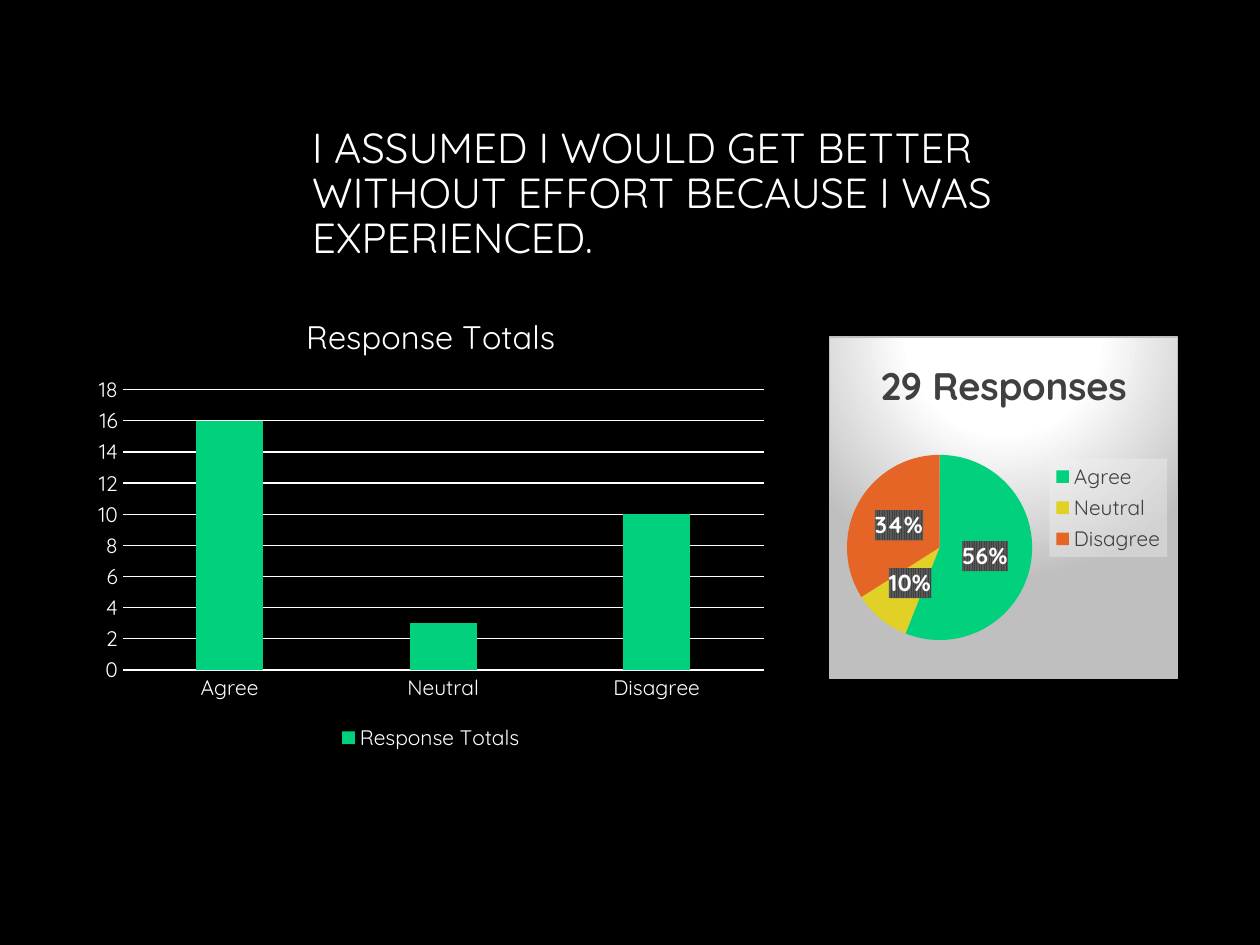
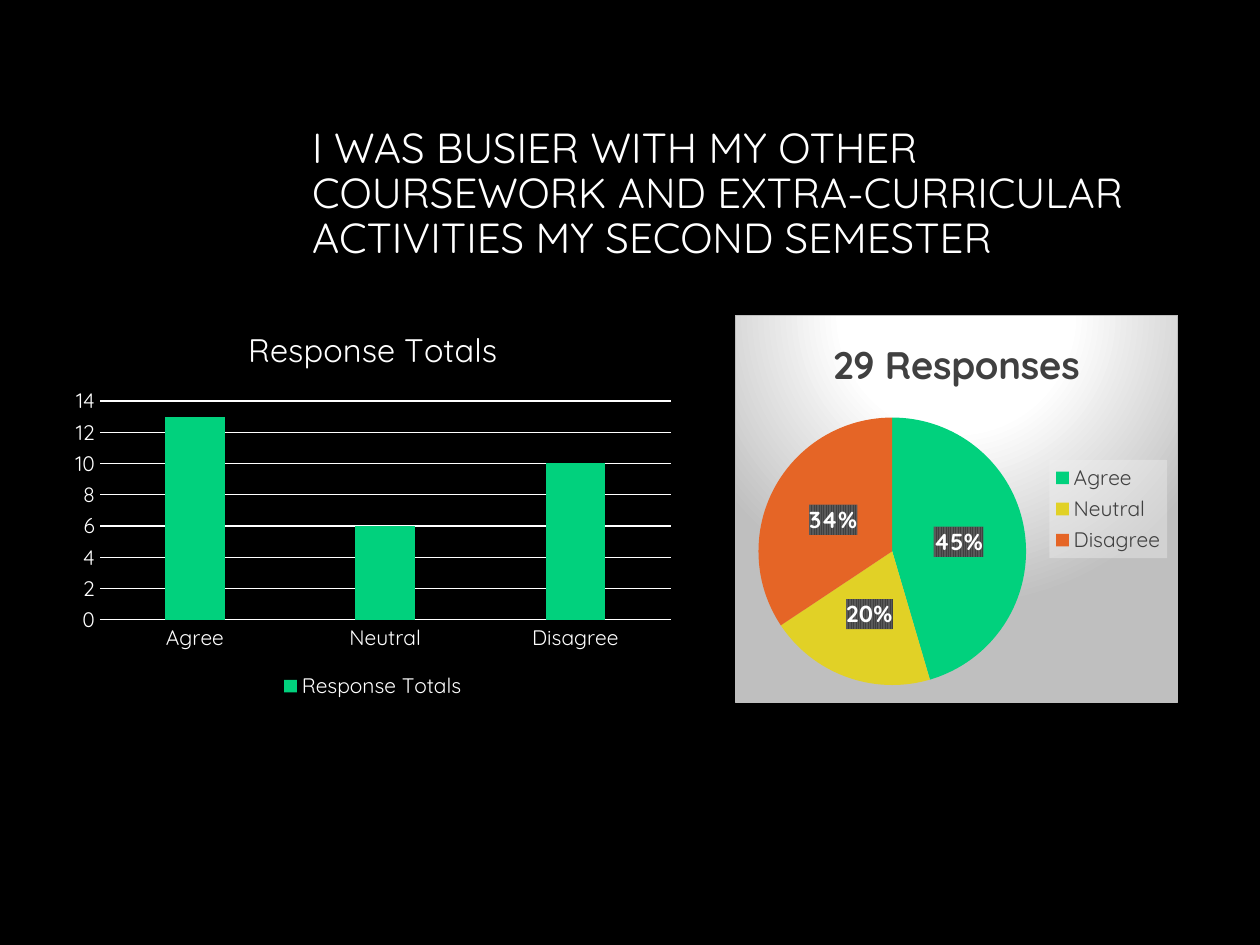
from dataclasses import dataclass

from lxml import etree
from pptx import Presentation
from pptx.chart.chart import Chart
from pptx.chart.data import CategoryChartData
from pptx.dml.color import RGBColor
from pptx.enum.chart import XL_CHART_TYPE as ChartType
from pptx.enum.chart import XL_LABEL_POSITION as LabelPosition
from pptx.enum.chart import XL_LEGEND_POSITION as LegendPosition
from pptx.enum.chart import XL_TICK_MARK as TickMark
from pptx.enum.text import MSO_ANCHOR as Anchor
from pptx.oxml import parse_xml
from pptx.oxml.ns import nsdecls, qn
from pptx.slide import Slide
from pptx.util import Inches, Pt

FONT = "Quicksand"
COLORS = {
    "background": "000000",
    "text": "FFFFFF",
    "dark": "404040",
    "stripe": "595959",
    "panel_edge": "BFBFBF",
    "legend": "F2F2F2",
    "agree": "01D17D",
    "neutral": "E1D126",
    "disagree": "E56526",
}
ANSWERS = ("Agree", "Neutral", "Disagree")
TOTALS_TITLE = "Response Totals"
SHARES_TITLE = "29 Responses"

# Fills that need XML: pie panel, legend and striped labels
PANEL_FILL = f"""<a:gradFill>
  <a:gsLst>
    <a:gs pos="0"><a:srgbClr val="{COLORS['text']}"/></a:gs>
    <a:gs pos="39000"><a:srgbClr val="{COLORS['text']}"/></a:gs>
    <a:gs pos="100000"><a:srgbClr val="{COLORS['panel_edge']}"/></a:gs>
  </a:gsLst>
  <a:path path="circle"><a:fillToRect l="50000" t="-80000" r="50000" b="180000"/></a:path>
</a:gradFill>
<a:ln w="9525"><a:solidFill><a:srgbClr val="{COLORS['panel_edge']}"/></a:solidFill></a:ln>"""
LEGEND_FILL = f"""<a:solidFill><a:srgbClr val="{COLORS['legend']}">
  <a:alpha val="39000"/></a:srgbClr></a:solidFill>"""
LABEL_FILL = f"""<a:pattFill prst="narVert">
  <a:fgClr><a:srgbClr val="{COLORS['dark']}"/></a:fgClr>
  <a:bgClr><a:srgbClr val="{COLORS['stripe']}"/></a:bgClr>
</a:pattFill>"""


@dataclass(frozen=True)
class ChartSpec:
    box: tuple[float, float, float, float]
    series_name: str
    values: tuple[int, ...]


@dataclass(frozen=True)
class Question:
    title: str
    totals: ChartSpec
    shares: ChartSpec


QUESTIONS = (
    Question(
        "I ASSUMED I WOULD GET BETTER WITHOUT EFFORT BECAUSE I WAS EXPERIENCED.",
        ChartSpec((0.67, 2.31, 5.5, 3.69), TOTALS_TITLE, (16, 3, 10)),
        ChartSpec((6.58, 2.67, 2.77, 2.72), "Series 1", (56, 10, 34)),
    ),
    Question(
        "I WAS BUSIER WITH MY OTHER COURSEWORK AND EXTRA-CURRICULAR "
        "ACTIVITIES MY SECOND SEMESTER",
        ChartSpec((0.5, 2.42, 4.92, 3.17), TOTALS_TITLE, (13, 6, 10)),
        ChartSpec((5.83, 2.5, 3.52, 3.08), SHARES_TITLE, (45, 20, 34)),
    ),
)


def rgb(name: str) -> RGBColor:
    return RGBColor.from_string(COLORS[name])


def style_font(font, size: float, color: str = "text", bold: bool = False) -> None:
    font.name = FONT
    font.size = Pt(size)
    font.bold = bold
    font.color.rgb = rgb(color)


def style_line(line) -> None:
    line.color.rgb = rgb("text")
    line.width = Pt(0.75)


def set_fill(chart: Chart, text_properties: str, fill: str) -> None:
    """Put shape properties just before the given text properties."""
    target = chart.element.xpath(text_properties)[0]
    target.addprevious(parse_xml(f"<c:spPr {nsdecls('c', 'a')}>{fill}</c:spPr>"))


def add_title(slide: Slide, text: str) -> None:
    box = slide.shapes.add_textbox(Inches(2.38), Inches(0.84), Inches(6.97), Inches(1.41))
    text_frame = box.text_frame
    text_frame.word_wrap = True
    text_frame.vertical_anchor = Anchor.MIDDLE
    text_frame.text = text
    paragraph = text_frame.paragraphs[0]
    paragraph.line_spacing = 0.9
    style_font(paragraph.runs[0].font, 24)


def add_base_chart(slide: Slide, spec: ChartSpec, kind: ChartType, title: str,
                   title_size: float, legend_position: LegendPosition,
                   color: str, bold_title: bool) -> Chart:
    data = CategoryChartData()
    data.categories = ANSWERS
    data.add_series(spec.series_name, spec.values)
    box = (Inches(length) for length in spec.box)
    chart = slide.shapes.add_chart(kind, *box, data).chart
    style_font(chart.font, 10)

    chart.has_title = True
    text_frame = chart.chart_title.text_frame
    text_frame.text = title
    style_font(text_frame.paragraphs[0].runs[0].font, title_size, color, bold_title)

    chart.has_legend = True
    chart.legend.position = legend_position
    chart.legend.include_in_layout = False
    style_font(chart.legend.font, 12, color)
    return chart


def add_totals_chart(slide: Slide, spec: ChartSpec) -> None:
    chart = add_base_chart(slide, spec, ChartType.COLUMN_CLUSTERED, TOTALS_TITLE,
                           18.6, LegendPosition.BOTTOM, "text", False)
    plot = chart.plots[0]
    plot.vary_by_categories = False
    plot.gap_width = 219
    plot.overlap = -27
    fill = plot.series[0].format.fill
    fill.solid()
    fill.fore_color.rgb = rgb("agree")

    for axis in (chart.category_axis, chart.value_axis):
        axis.major_tick_mark = axis.minor_tick_mark = TickMark.NONE
        style_font(axis.tick_labels.font, 12)
    style_line(chart.category_axis.format.line)
    chart.value_axis.format.line.fill.background()
    style_line(chart.value_axis.major_gridlines.format.line)


def add_shares_chart(slide: Slide, spec: ChartSpec) -> None:
    chart = add_base_chart(slide, spec, ChartType.PIE, SHARES_TITLE,
                           22, LegendPosition.RIGHT, "dark", True)
    plot = chart.plots[0]
    plot.vary_by_categories = True
    for index, answer in enumerate(ANSWERS):
        fill = plot.series[0].points[index].format.fill
        fill.solid()
        fill.fore_color.rgb = rgb(answer.lower())

    plot.has_data_labels = True
    labels = plot.data_labels
    labels.show_percentage = True
    labels.show_value = False
    labels.number_format = "0%"
    labels.number_format_is_linked = False
    labels.position = LabelPosition.CENTER
    style_font(labels.font, 13.3, bold=True)

    # Square panel corners, then the special fills
    corners = etree.Element(qn("c:roundedCorners"), val="0")
    chart.element.xpath("c:chart")[0].addprevious(corners)
    set_fill(chart, "c:txPr", PANEL_FILL)
    set_fill(chart, "c:chart/c:legend/c:txPr", LEGEND_FILL)
    set_fill(chart, ".//c:dLbls/c:txPr", LABEL_FILL)


def main() -> None:
    presentation = Presentation()
    presentation.slide_width = Inches(10)
    presentation.slide_height = Inches(7.5)
    for question in QUESTIONS:
        slide = presentation.slides.add_slide(presentation.slide_layouts[6])
        background = slide.background.fill
        background.solid()
        background.fore_color.rgb = rgb("background")
        add_title(slide, question.title)
        add_totals_chart(slide, question.totals)
        add_shares_chart(slide, question.shares)
    presentation.save("out.pptx")


if __name__ == "__main__":
    main()
